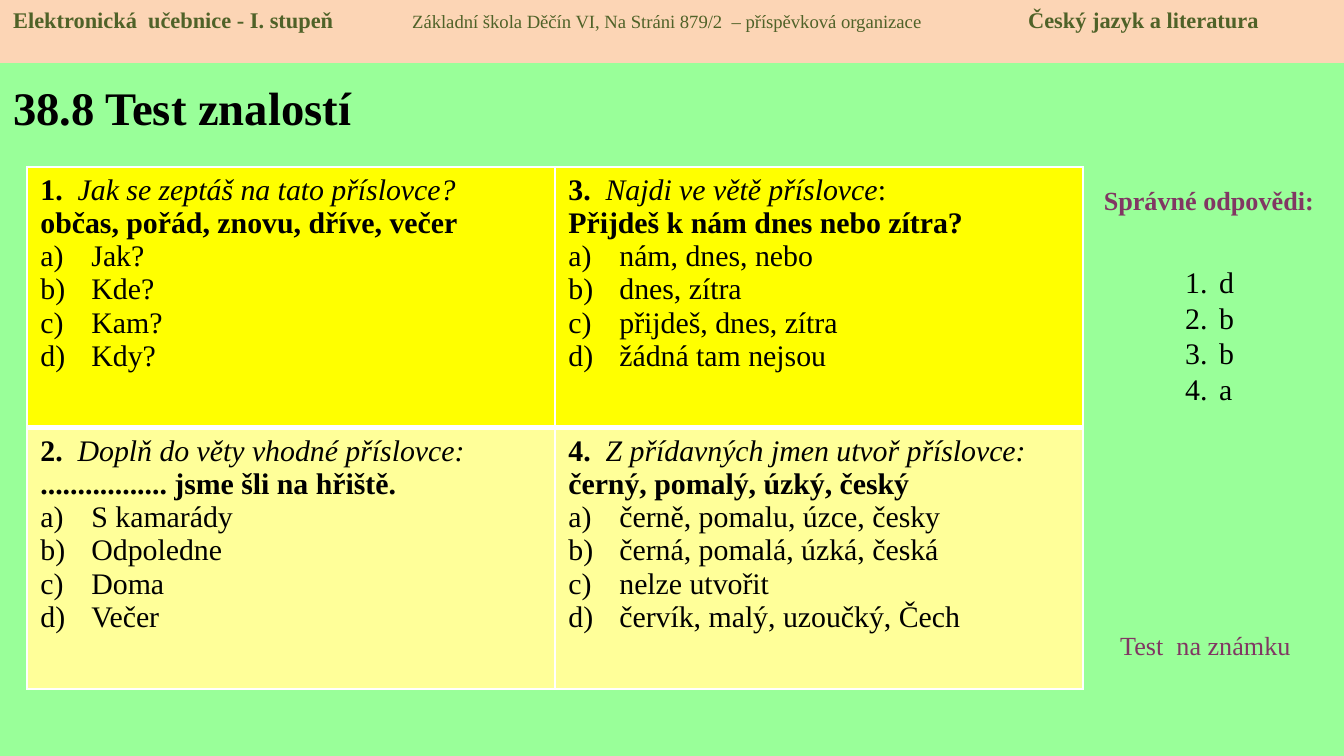
import pptx
import pptx.util
import pptx.dml.color
import pptx.enum.shapes
import pptx.enum.text
import pptx.oxml
import pptx.oxml.ns

FACE = "Times New Roman"
BLACK, PLUM, OLIVE, WHITE = "000000", "813763", "4F6228", "FFFFFF"
ALIGN = pptx.enum.text.PP_ALIGN
ANCHOR = pptx.enum.text.MSO_ANCHOR

# Each cell: number, question, its end mark, sentence, options
TESTS = [
    [("1.", "Jak se zeptáš na tato příslovce?", "",
      "občas, pořád, znovu, dříve, večer",
      ["Jak?", "Kde?", "Kam?", "Kdy?"]),
     ("3.", "Najdi ve větě příslovce", ":",
      "Přijdeš k nám dnes nebo zítra?",
      ["nám, dnes, nebo", "dnes, zítra", "přijdeš, dnes, zítra",
       "žádná tam nejsou"])],
    [("2.", "Doplň do věty vhodné příslovce:", "",
      "................. jsme šli na hřiště.",
      ["S kamarády", "Odpoledne", "Doma", "Večer"]),
     ("4.", "Z přídavných jmen utvoř příslovce:", "",
      "černý, pomalý, úzký, český",
      ["černě, pomalu, úzce, česky", "černá, pomalá, úzká, česká",
       "nelze utvořit", "červík, malý, uzoučký, Čech"])],
]
FILLS = ["FFFF00", "FFFF99"]


def px(n):
    return round(n * 914400 / 134.4)


def rgb(code):
    return pptx.dml.color.RGBColor.from_string(code)


def node(owner, tag, **attrs):
    """Append a drawing element to its owner."""
    item = pptx.oxml.parse_xml(f"<a:{tag} {pptx.oxml.ns.nsdecls('a')}/>")
    for key, value in attrs.items():
        item.set(key, str(value))
    owner.append(item)
    return item


def style(font, size, color, bold=None):
    font.name = FACE
    font.size = pptx.util.Pt(size)
    font.color.rgb = rgb(color)
    font.bold = bold


def line(frame, first=False):
    """Give the next paragraph of a frame."""
    return frame.paragraphs[0] if first else frame.add_paragraph()


def number(para, kind, indent):
    """Turn a paragraph into an item of a numbered list."""
    props = para._p.get_or_add_pPr()
    props.set("marL", str(px(indent)))
    props.set("indent", str(-px(indent)))
    node(props, "buAutoNum", type=kind)


def add_text(slide, box, text, size, color, bold=False, align=ALIGN.LEFT,
             anchor=ANCHOR.TOP):
    frame = slide.shapes.add_textbox(*map(px, box)).text_frame
    frame.word_wrap = True
    frame.vertical_anchor = anchor
    para = line(frame, True)
    para.text = text
    para.alignment = align
    style(para.font, size, color, bold)


def add_head(slide):
    shape = slide.shapes.add_shape(pptx.enum.shapes.MSO_SHAPE.RECTANGLE,
                                   0, 0, px(1344), px(63))
    shape.shadow.inherit = False
    shape.fill.solid()
    shape.fill.fore_color.rgb = rgb("FCD5B5")
    shape.line.fill.background()
    frame = shape.text_frame
    frame.vertical_anchor = ANCHOR.TOP
    para = line(frame, True)
    para.alignment = ALIGN.LEFT
    tabs = node(para._p.get_or_add_pPr(), "tabLst")
    for stop in (399, 1015):
        node(tabs, "tab", pos=px(stop), algn="l")
    for text, size, bold in [
            ("Elektronická  učebnice - I. stupeň\t", 12, True),
            ("Základní škola Děčín VI, Na Stráni 879/2"
             "  – příspěvková organizace\t", 10, False),
            ("Český jazyk a literatura", 12, True)]:
        run = para.add_run()
        run.text = text
        style(run.font, size, OLIVE, bold)


def add_edges(cell, **widths):
    """Draw white cell borders, widths in points."""
    props = cell._tc.get_or_add_tcPr()
    for side in "LRTB":
        edge = node(props, "ln" + side, w=pptx.util.Pt(widths.get(side, 1)))
        node(node(edge, "solidFill"), "srgbClr", val=WHITE)


def fill_cell(cell, test):
    mark, ask, end, phrase, options = test
    frame = cell.text_frame
    # Question
    para = line(frame, True)
    style(para.font, 16, BLACK)
    for text, bold, italic in [(mark + "  ", True, False),
                               (ask, False, True), (end, False, False)]:
        if text:
            run = para.add_run()
            run.text = text
            run.font.bold, run.font.italic = bold, italic
    # Sentence
    para = line(frame)
    para.text = phrase
    style(para.font, 16, BLACK, True)
    # Options
    for option in options:
        para = line(frame)
        para.text = option
        number(para, "alphaLcParenR", 51)
        style(para.font, 16, BLACK, False)


def add_tests(slide):
    table = slide.shapes.add_table(2, 2, px(27), px(167),
                                   px(1056), px(522)).table
    table.first_row = table.horz_banding = False
    for r, tests in enumerate(TESTS):
        for c, test in enumerate(tests):
            cell = table.cell(r, c)
            add_edges(cell, **({"T": 3} if r else {"B": 3}))
            cell.fill.solid()
            cell.fill.fore_color.rgb = rgb(FILLS[r])
            fill_cell(cell, test)


def add_keys(slide, keys):
    """List the right answers."""
    frame = slide.shapes.add_textbox(px(1172), px(222),
                                     px(74), px(267)).text_frame
    frame.word_wrap = True
    frame.margin_top = px(42)
    for i, key in enumerate(keys):
        para = line(frame, i == 0)
        para.text = key
        para.line_spacing = pptx.util.Pt(19.1)
        number(para, "arabicPeriod", 34)
        style(para.font, 16, BLACK)


def main():
    deck = pptx.Presentation()
    deck.slide_width, deck.slide_height = px(1344), px(756)
    slide = deck.slides.add_slide(deck.slide_layouts[6])
    slide.background.fill.solid()
    slide.background.fill.fore_color.rgb = rgb("99FF99")

    # Title and tests
    add_text(slide, (0, 63, 429, 87), "38.8 Test znalostí", 25, BLACK, True,
             anchor=ANCHOR.MIDDLE)
    add_tests(slide)

    # Answers at the right
    add_text(slide, (1082, 178, 254, 46), "Správné odpovědi:", 14, PLUM, True,
             ALIGN.CENTER)
    add_keys(slide, "dbba")
    add_text(slide, (1107, 623, 211, 46), "Test  na známku", 14, PLUM)

    # Top band
    add_head(slide)
    deck.save("out.pptx")


if __name__ == "__main__":
    main()
